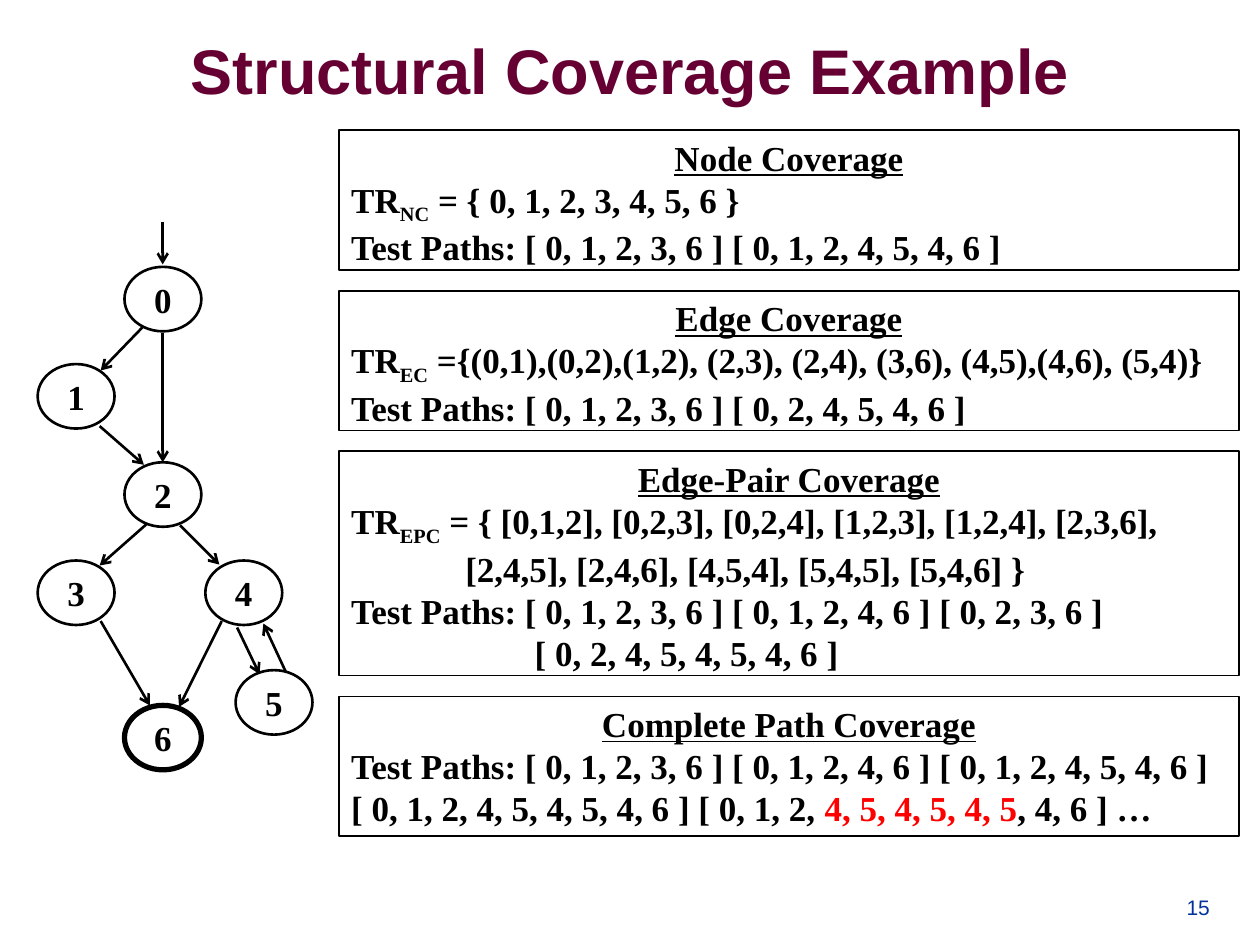
from dataclasses import dataclass

from lxml import etree
from pptx import Presentation
from pptx.dml.color import RGBColor
from pptx.enum.shapes import MSO_CONNECTOR, MSO_SHAPE
from pptx.enum.text import MSO_ANCHOR, PP_ALIGN
from pptx.oxml.ns import qn
from pptx.util import Cm, Pt

RECTANGLE, OVAL = MSO_SHAPE.RECTANGLE, MSO_SHAPE.OVAL
STRAIGHT = MSO_CONNECTOR.STRAIGHT
TOP, MIDDLE, BOTTOM = MSO_ANCHOR.TOP, MSO_ANCHOR.MIDDLE, MSO_ANCHOR.BOTTOM
LEFT, CENTER, RIGHT = PP_ALIGN.LEFT, PP_ALIGN.CENTER, PP_ALIGN.RIGHT


@dataclass(frozen=True)
class Theme:
    ink: str = "000000"
    title: str = "660033"
    number: str = "003399"
    loop: str = "FF0000"
    heading_font: str = "Arial"
    body_font: str = "Times New Roman"
    title_size: int = 36
    body_size: int = 20
    number_size: int = 12
    box_line: float = 1
    graph_line: float = 1.5
    final_line: float = 3


THEME = Theme()

NODE_WIDTH, NODE_HEIGHT = 1.55, 1.3
NODES = {
    "0": (2.51, 5.38),
    "1": (0.76, 7.34),
    "2": (2.51, 9.32),
    "3": (0.76, 11.3),
    "4": (4.14, 11.3),
    "5": (4.75, 13.51),
    "6": (2.51, 14.22),
}
FINAL_NODE = "6"

EDGES = [
    ((3.28, 4.47), (3.28, 5.33)),  # entry to 0
    ((2.87, 6.6), (2.03, 7.47)),  # 0 to 1
    ((3.28, 6.71), (3.28, 9.32)),  # 0 to 2
    ((2.01, 8.59), (2.9, 9.37)),  # 1 to 2
    ((2.95, 10.57), (2.01, 11.4)),  # 2 to 3
    ((3.63, 10.59), (4.42, 11.38)),  # 2 to 4
    ((2.03, 12.52), (3.02, 14.22)),  # 3 to 6
    ((4.47, 12.52), (3.61, 14.25)),  # 4 to 6
    ((4.78, 12.65), (5.23, 13.59)),  # 4 to 5
    ((5.77, 13.56), (5.31, 12.57)),  # 5 to 4
]

SUB = {"subscript": True}
LOOP = {"color": THEME.loop}
BOX_LEFT, BOX_TOP, BOX_WIDTH, BOX_GAP = 6.83, 2.62, 18.15, 0.42
# Heading, height, and lines as (indent, spans of text and format)
CRITERIA = [
    ("Node Coverage", 2.82, [
        (0, [("TR", {}), ("NC", SUB), (" = { 0, 1, 2, 3, 4, 5, 6 }", {})]),
        (0, [("Test Paths: [ 0, 1, 2, 3, 6 ] [ 0, 1, 2, 4, 5, 4, 6 ]", {})]),
    ]),
    ("Edge Coverage", 2.82, [
        (0, [("TR", {}), ("EC", SUB),
             (" ={(0,1),(0,2),(1,2), (2,3), (2,4), (3,6), (4,5),(4,6), (5,4)}", {})]),
        (0, [("Test Paths: [ 0, 1, 2, 3, 6 ] [ 0, 2, 4, 5, 4, 6 ]", {})]),
    ]),
    ("Edge-Pair Coverage", 4.52, [
        (0, [("TR", {}), ("EPC", SUB),
             (" = { [0,1,2], [0,2,3], [0,2,4], [1,2,3], [1,2,4], [2,3,6],", {})]),
        (2.3, [("[2,4,5], [2,4,6], [4,5,4], [5,4,5], [5,4,6] }", {})]),
        (0, [("Test Paths: [ 0, 1, 2, 3, 6 ] [ 0, 1, 2, 4, 6 ] [ 0, 2, 3, 6 ]", {})]),
        (3.7, [("[ 0, 2, 4, 5, 4, 5, 4, 6 ]", {})]),
    ]),
    ("Complete Path Coverage", 2.82, [
        (0, [("Test Paths: [ 0, 1, 2, 3, 6 ] [ 0, 1, 2, 4, 6 ] [ 0, 1, 2, 4, 5, 4, 6 ] "
              "[ 0, 1, 2, 4, 5, 4, 5, 4, 6 ] [ 0, 1, 2, ", {}),
             ("4, 5, 4, 5, 4, 5", LOOP), (", 4, 6 ] …", {})]),
    ]),
]


def add_text(para, text, *, font=THEME.body_font, size=THEME.body_size,
             color=THEME.ink, bold=True, underline=False, subscript=False):
    """Append one formatted span to a paragraph."""
    span = para.add_run()
    span.text = text
    span.font.name = font
    span.font.size = Pt(size)
    span.font.bold = bold
    span.font.underline = underline
    span.font.color.rgb = RGBColor.from_string(color)
    if subscript:
        span.font._element.set("baseline", "-25000")


def place(box, left, top, width, height):
    box.left, box.top = Cm(left), Cm(top)
    box.width, box.height = Cm(width), Cm(height)


def add_outline(page, kind, bounds, weight, anchor):
    """Add an unfilled, outlined shape that can hold text."""
    shape = page.shapes.add_shape(kind, *map(Cm, bounds))
    shape.shadow.inherit = False
    shape.fill.background()
    shape.line.color.rgb = RGBColor.from_string(THEME.ink)
    shape.line.width = Pt(weight)
    shape.text_frame.word_wrap = True
    shape.text_frame.vertical_anchor = anchor
    return shape


def add_title(page, text):
    title = page.shapes.title
    place(title, 1.27, -0.2, 22.86, 3.18)
    title.text_frame.vertical_anchor = MIDDLE
    para = title.text_frame.paragraphs[0]
    para.alignment = CENTER
    add_text(para, text, font=THEME.heading_font, size=THEME.title_size,
             color=THEME.title)


def add_page_number(page, text):
    box = page.shapes.add_textbox(Cm(22.89), Cm(17.35), Cm(1.75), Cm(1.32))
    box.text_frame.word_wrap = True
    box.text_frame.vertical_anchor = BOTTOM
    para = box.text_frame.paragraphs[0]
    para.alignment = RIGHT
    add_text(para, text, font=THEME.heading_font, size=THEME.number_size,
             color=THEME.number, bold=False)


def add_node(page, label, left, top):
    weight = THEME.final_line if label == FINAL_NODE else THEME.graph_line
    node = add_outline(page, OVAL, (left, top, NODE_WIDTH, NODE_HEIGHT), weight, MIDDLE)
    frame = node.text_frame
    frame.margin_left = frame.margin_right = 0
    frame.margin_top = frame.margin_bottom = 0
    frame.paragraphs[0].alignment = CENTER
    add_text(frame.paragraphs[0], label)


def add_arrow(page, start, end):
    arrow = page.shapes.add_connector(STRAIGHT, *map(Cm, start + end))
    arrow.line.color.rgb = RGBColor.from_string(THEME.ink)
    arrow.line.width = Pt(THEME.graph_line)
    etree.SubElement(arrow.line._get_or_add_ln(), qn("a:tailEnd"), type="arrow")
    etree.SubElement(arrow._element.spPr, qn("a:effectLst"))


def add_criterion(page, top, heading, height, lines):
    """Add a framed box with an underlined heading above its lines."""
    bounds = (BOX_LEFT, top, BOX_WIDTH, height)
    frame = add_outline(page, RECTANGLE, bounds, THEME.box_line, TOP).text_frame
    para = frame.paragraphs[0]
    para.alignment = CENTER
    add_text(para, heading, underline=True)
    for indent, spans in lines:
        para = frame.add_paragraph()
        para.alignment = LEFT
        if indent:
            para._p.get_or_add_pPr().set("marL", str(Cm(indent)))
        for text, style in spans:
            add_text(para, text, **style)


def main():
    deck = Presentation()
    deck.slide_width, deck.slide_height = Cm(25.4), Cm(19.05)
    page = deck.slides.add_slide(deck.slide_layouts.get_by_name("Title Only"))
    add_title(page, "Structural Coverage Example")
    for label, (left, top) in NODES.items():
        add_node(page, label, left, top)
    for start, end in EDGES:
        add_arrow(page, start, end)
    top = BOX_TOP
    for heading, height, lines in CRITERIA:
        add_criterion(page, top, heading, height, lines)
        top += height + BOX_GAP
    add_page_number(page, "15")
    deck.save("out.pptx")


if __name__ == "__main__":
    main()
